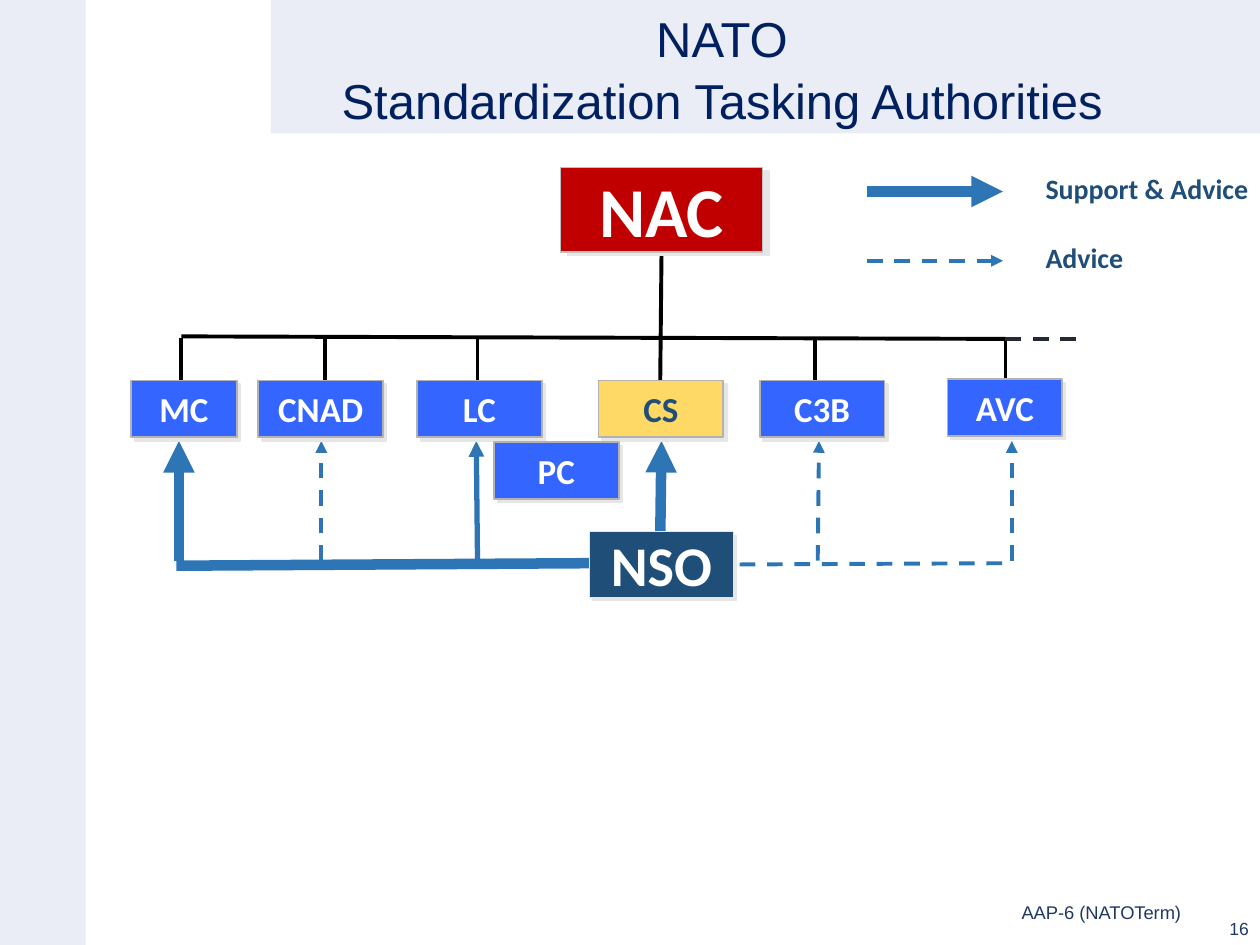
from lxml import etree
from pptx import Presentation
from pptx.dml.color import RGBColor
from pptx.enum.dml import MSO_LINE
from pptx.enum.shapes import MSO_CONNECTOR, MSO_SHAPE
from pptx.enum.text import MSO_ANCHOR, MSO_AUTO_SIZE, PP_ALIGN
from pptx.oxml.ns import qn
from pptx.util import Inches, Pt

RECTANGLE = MSO_SHAPE.RECTANGLE
STRAIGHT = MSO_CONNECTOR.STRAIGHT
DASH = MSO_LINE.DASH
MIDDLE, BOTTOM, TOP = MSO_ANCHOR.MIDDLE, MSO_ANCHOR.BOTTOM, MSO_ANCHOR.TOP
LEFT, CENTER, RIGHT = PP_ALIGN.LEFT, PP_ALIGN.CENTER, PP_ALIGN.RIGHT
color = RGBColor.from_string

PALE, BLUE, NAVY, BLACK = "EAEDF6", "2E75B6", "1F4E79", "000000"
BOX_BLUE, WHITE, GRAY = "3565FF", "FFFFFF", "B2B2B2"


def add_line(x1, y1, x2, y2, line_color, width, dashed=False, arrow=False):
    line = page.shapes.add_connector(
        STRAIGHT, Inches(x1), Inches(y1), Inches(x2), Inches(y2))
    line.line.color.rgb = color(line_color)
    line.line.width = Pt(width)
    if dashed:
        line.line.dash_style = DASH
    if arrow:
        etree.SubElement(line.line._get_or_add_ln(), qn("a:tailEnd"), type="triangle")
    etree.SubElement(line._element.spPr, qn("a:effectLst"))


def write(shape, text, size, font_name, font_color, align, anchor, bold=False, wrap=False):
    frame = shape.text_frame
    frame.auto_size = MSO_AUTO_SIZE.NONE
    frame.word_wrap = wrap
    frame.vertical_anchor = anchor
    frame.text = text
    for para in frame.paragraphs:
        para.alignment = align
        para.font.size = Pt(size)
        para.font.name = font_name
        para.font.bold = bold
        para.font.color.rgb = color(font_color)


deck = Presentation()
deck.slide_width, deck.slide_height = Inches(10), Inches(7.5)
page = deck.slides.add_slide(deck.slide_layouts[5])

for left, width, height in [(0, 0.68, 7.5), (2.15, 7.85, 1.06)]:
    band = page.shapes.add_shape(
        RECTANGLE, Inches(left), 0, Inches(width), Inches(height))
    band.shadow.inherit = False
    band.fill.solid()
    band.fill.fore_color.rgb = color(PALE)
    band.line.fill.background()

title = page.shapes.title
page.shapes._spTree.append(title._element)
title.left, title.top = Inches(1.85), Inches(-0.12)
title.width, title.height = Inches(7.76), Inches(1.31)
write(title, "NATO\nStandardization Tasking Authorities", 28, "Arial", "002060",
      CENTER, MIDDLE, wrap=True)
for para in title.text_frame.paragraphs:
    para.line_spacing = 1.05

add_line(6.88, 1.52, 7.96, 1.52, BLUE, 6, arrow=True)
add_line(6.88, 2.07, 7.96, 2.07, BLUE, 2.25, dashed=True, arrow=True)

add_line(5.25, 2.02, 5.24, 3.04, BLACK, 2.25)
for x in (1.44, 2.58, 3.79, 6.47, 7.98):
    add_line(x, 2.68, x, 3.03, BLACK, 2.25)
add_line(7.98, 2.69, 1.44, 2.67, BLACK, 2.25)
add_line(7.98, 2.69, 8.58, 2.69, "222A35", 2.25, dashed=True)

add_line(1.4, 4.49, 4.68, 4.47, BLUE, 6)
add_line(5.87, 4.48, 8.03, 4.47, BLUE, 2.25, dashed=True)
for x1, y1, x2, width, dashed in [
    (1.42, 4.45, 1.42, 6, False),
    (2.55, 4.45, 2.55, 2.25, True),
    (3.79, 4.45, 3.78, 3, False),
    (5.24, 4.29, 5.25, 6, False),
    (6.49, 4.45, 6.5, 2.25, True),
    (8.03, 4.45, 8.03, 2.25, True),
]:
    add_line(x1, y1, x2, 3.5, BLUE, width, dashed, arrow=True)

boxes = [
    ("NAC", 4.45, 1.33, 1.6, 0.67, "C00000", "C0C0C0", 0.75, WHITE, 40, 4.5, 27),
    ("NSO", 4.68, 4.22, 1.14, 0.52, NAVY, "E7E6E6", 0.75, WHITE, 32, 2.8, 45),
    ("CS", 4.75, 3.02, 0.99, 0.45, "FFD966", GRAY, 1, NAVY, 20, 2.8, 45),
]
for name, left, top, width in [
    ("MC", 1.04, 3.02, 0.84), ("CNAD", 2.05, 3.02, 0.99), ("LC", 3.31, 3.02, 0.99),
    ("PC", 3.92, 3.51, 0.99), ("C3B", 6.03, 3.02, 0.99), ("AVC", 7.52, 3.01, 0.91),
]:
    boxes.append((name, left, top, width, 0.45, BOX_BLUE, GRAY, 1, WHITE, 20, 2.8, 45))

for (name, left, top, width, height, fill, edge, edge_width,
     font_color, size, distance, angle) in boxes:
    box = page.shapes.add_shape(
        RECTANGLE, Inches(left), Inches(top), Inches(width), Inches(height))
    box.fill.solid()
    box.fill.fore_color.rgb = color(fill)
    box.line.color.rgb = color(edge)
    box.line.width = Pt(edge_width)
    box.shadow.inherit = False
    shadow = etree.SubElement(
        box._element.spPr.find(qn("a:effectLst")), qn("a:outerShdw"),
        blurRad="0", dist=str(int(Pt(distance))), dir=str(angle * 60000),
        algn="ctr", rotWithShape="0")
    etree.SubElement(shadow, qn("a:srgbClr"), val="E7E6E6")
    write(box, name, size, "Calibri", font_color, CENTER, MIDDLE, bold=True)

for text, left, top, width, height, size, font_name, font_color, align, anchor, bold in [
    ("Support & Advice", 8.2, 1.31, 1.84, 0.37, 16, "Calibri", NAVY, LEFT, TOP, True),
    ("Advice", 8.2, 1.86, 0.83, 0.37, 16, "Calibri", NAVY, LEFT, TOP, True),
    ("16", 7.76, 7.1, 2.25, 0.4, 10, "Arial", "203864", RIGHT, BOTTOM, False),
    ("AAP-6 (NATOTerm)", 8.01, 7.1, 1.66, 0.29, 10.5, "Arial", "203864", LEFT, TOP, False),
]:
    label = page.shapes.add_textbox(
        Inches(left), Inches(top), Inches(width), Inches(height))
    write(label, text, size, font_name, font_color, align, anchor, bold,
          wrap=font_name == "Arial")

deck.save("out.pptx")
